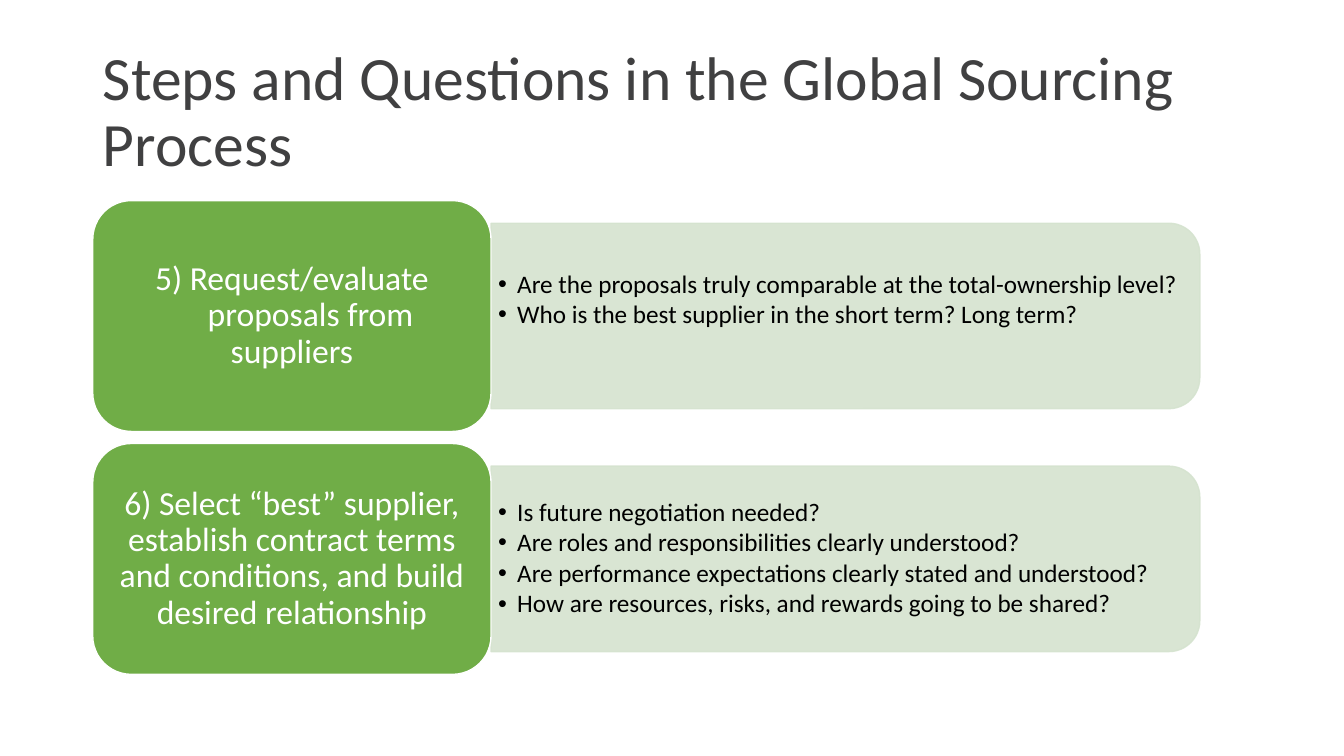
"""Build the slide on steps and questions in the global sourcing process."""
from lxml import etree
from pptx import Presentation
from pptx import util as u
from pptx.dml.color import RGBColor
from pptx.enum import shapes, text
from pptx.oxml.ns import qn

TITLE = "Steps and Questions in the Global Sourcing Process"
STEPS = [
    {
        "label": ["5) Request/evaluate", "proposals from suppliers"],
        "second_line_indent": 0.37,
        "questions": [
            "Are the proposals truly comparable at the total-ownership level?",
            "Who is the best supplier in the short term? Long term?",
        ],
        "bottom_inset": 0.35,
    },
    {
        "label": ["6) Select “best” supplier, establish contract terms "
                  "and conditions, and build desired relationship"],
        "second_line_indent": 0,
        "questions": [
            "Is future negotiation needed?",
            "Are roles and responsibilities clearly understood?",
            "Are performance expectations clearly stated and understood?",
            "How are resources, risks, and rewards going to be shared?",
        ],
        "bottom_inset": 0.04,
    },
]
COLORS = {"title": "404041", "step": "70AD47", "panel": "D5E3CF",
          "white": "FFFFFF", "black": "000000"}
FONT = "Calibri"
LEFT, TOP, PITCH = 0.92, 1.99, 2.41
STEP_WIDTH, STEP_HEIGHT = 3.95, 2.29
PANEL_WIDTH, PANEL_HEIGHT = 7.03, 1.84
TEXT_WIDTH, TEXT_HEIGHT = 6.94, 1.66
PANEL_LEFT = LEFT + STEP_WIDTH


def color(name):
    return RGBColor.from_string(COLORS[name])


def style(para, size, name, align):
    para.alignment = align
    para.line_spacing = 0.9
    for span in para.runs:
        span.font.name = FONT
        span.font.size = u.Pt(size)
        span.font.color.rgb = color(name)


def add_block(page, kind, left, top, width, height, fill, line):
    block = page.shapes.add_shape(
        kind, *map(u.Inches, (left, top, width, height)))
    block.shadow.inherit = False
    block.fill.solid()
    block.fill.fore_color.rgb = color(fill)
    block.line.color.rgb = color(line)
    block.line.width = u.Pt(1)
    return block


def add_panel(page, middle):
    center = PANEL_LEFT + PANEL_WIDTH / 2
    panel = add_block(page, shapes.MSO_SHAPE.ROUND_2_SAME_RECTANGLE,
                      center - PANEL_HEIGHT / 2, middle - PANEL_WIDTH / 2,
                      PANEL_HEIGHT, PANEL_WIDTH, "panel", "panel")
    panel.rotation = 90
    for tint in panel._element.spPr.iter(qn("a:srgbClr")):
        etree.SubElement(tint, qn("a:alpha"), val="90000")


def add_questions(page, middle, step):
    box = page.shapes.add_textbox(*map(u.Inches, (
        PANEL_LEFT, middle - TEXT_HEIGHT / 2, TEXT_WIDTH, TEXT_HEIGHT)))
    frame = box.text_frame
    frame.word_wrap = True
    frame.vertical_anchor = text.MSO_ANCHOR.MIDDLE
    frame.margin_left = frame.margin_right = u.Inches(0.07)
    frame.margin_top = u.Inches(0.04)
    frame.margin_bottom = u.Inches(step["bottom_inset"])
    frame.text = "\n".join(step["questions"])
    for para in frame.paragraphs:
        style(para, 18, "black", text.PP_ALIGN.LEFT)
        para.space_after = u.Pt(2.4)
        props = para._p.get_or_add_pPr()
        props.set("marL", str(u.Inches(0.19)))
        props.set("indent", str(-u.Inches(0.19)))
        etree.SubElement(props, qn("a:buFont"), typeface="Arial")
        etree.SubElement(props, qn("a:buChar"), char="•")


def add_step(page, top, step):
    block = add_block(page, shapes.MSO_SHAPE.ROUNDED_RECTANGLE,
                      LEFT, top, STEP_WIDTH, STEP_HEIGHT, "step", "white")
    frame = block.text_frame
    frame.word_wrap = True
    frame.vertical_anchor = text.MSO_ANCHOR.MIDDLE
    frame.margin_top = frame.margin_bottom = u.Inches(0.1)
    frame.text = "\n".join(step["label"])
    for para in frame.paragraphs:
        style(para, 24, "white", text.PP_ALIGN.CENTER)
    for para in frame.paragraphs[1:]:
        indent = u.Inches(step["second_line_indent"])
        para._p.get_or_add_pPr().set("indent", str(indent))


def main():
    deck = Presentation()
    deck.slide_width, deck.slide_height = u.Inches(13.33), u.Inches(7.5)
    page = deck.slides.add_slide(deck.slide_layouts[5])
    title = page.shapes.title
    title.left, title.top, title.width, title.height = map(
        u.Inches, (LEFT, 0.4, 11.5, 1.45))
    title.text_frame.text = TITLE
    title.text_frame.word_wrap = True
    title.text_frame.auto_size = text.MSO_AUTO_SIZE.NONE
    title.text_frame.vertical_anchor = text.MSO_ANCHOR.MIDDLE
    style(title.text_frame.paragraphs[0], 44, "title", text.PP_ALIGN.LEFT)
    for row, step in enumerate(STEPS):
        top = TOP + row * PITCH
        middle = top + STEP_HEIGHT / 2
        add_panel(page, middle)
        add_questions(page, middle, step)
        add_step(page, top, step)
    deck.save("out.pptx")


if __name__ == "__main__":
    main()
